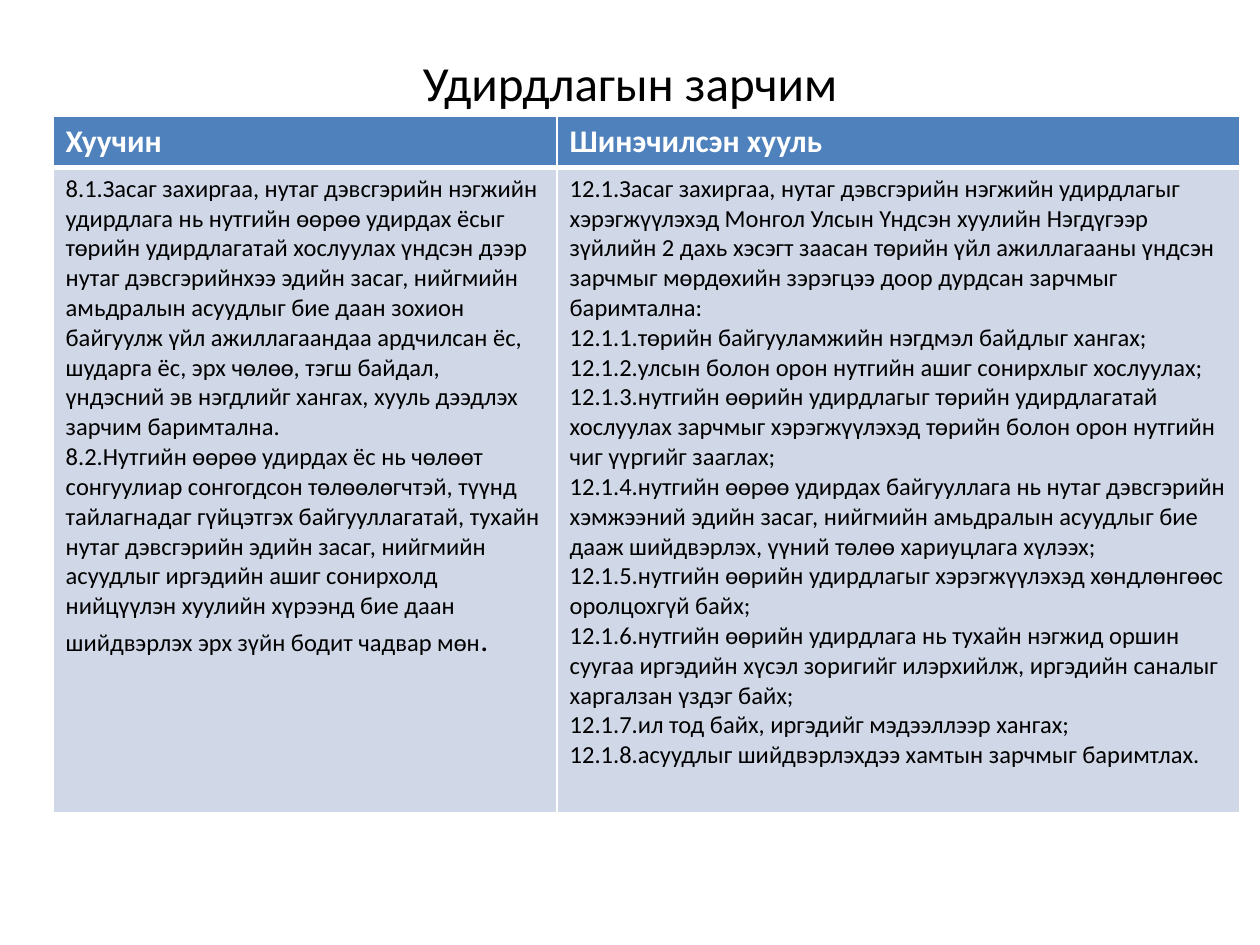
from lxml.etree import SubElement
from pptx import Presentation
from pptx.dml.color import RGBColor
from pptx.enum.text import MSO_ANCHOR, PP_ALIGN
from pptx.oxml.ns import qn
from pptx.util import Cm, Pt

FONT = "Calibri"
BLACK, WHITE = "000000", "FFFFFF"
HEADER_FILL, BODY_FILL = "4F81BD", "D0D8E8"

HEADINGS = ["Хуучин", "Шинэчилсэн хууль"]

OLD_LAW = [
    "8.1.Засаг захиргаа, нутаг дэвсгэрийн нэгжийн удирдлага нь нутгийн өөрөө удирдах ёсыг "
    "төрийн удирдлагатай хослуулах үндсэн дээр нутаг дэвсгэрийнхээ эдийн засаг, нийгмийн "
    "амьдралын асуудлыг бие даан зохион байгуулж үйл ажиллагаандаа ардчилсан ёс, шударга ёс, "
    "эрх чөлөө, тэгш байдал, үндэсний эв нэгдлийг хангах, хууль дээдлэх зарчим баримтална.",
    "8.2.Нутгийн өөрөө удирдах ёс нь чөлөөт сонгуулиар сонгогдсон төлөөлөгчтэй, түүнд "
    "тайлагнадаг гүйцэтгэх байгууллагатай, тухайн нутаг дэвсгэрийн эдийн засаг, нийгмийн "
    "асуудлыг иргэдийн ашиг сонирхолд нийцүүлэн хуулийн хүрээнд бие даан шийдвэрлэх эрх зүйн "
    "бодит чадвар мөн",
]

NEW_LAW = [
    "12.1.Засаг захиргаа, нутаг дэвсгэрийн нэгжийн удирдлагыг хэрэгжүүлэхэд Монгол Улсын "
    "Үндсэн хуулийн Нэгдүгээр зүйлийн 2 дахь хэсэгт заасан төрийн үйл ажиллагааны үндсэн "
    "зарчмыг мөрдөхийн зэрэгцээ доор дурдсан зарчмыг баримтална:",
    "12.1.1.төрийн байгууламжийн нэгдмэл байдлыг хангах;",
    "12.1.2.улсын болон орон нутгийн ашиг сонирхлыг хослуулах;",
    "12.1.3.нутгийн өөрийн удирдлагыг төрийн удирдлагатай хослуулах зарчмыг хэрэгжүүлэхэд "
    "төрийн болон орон нутгийн чиг үүргийг зааглах;",
    "12.1.4.нутгийн өөрөө удирдах байгууллага нь нутаг дэвсгэрийн хэмжээний эдийн засаг, "
    "нийгмийн амьдралын асуудлыг бие дааж шийдвэрлэх, үүний төлөө хариуцлага хүлээх;",
    "12.1.5.нутгийн өөрийн удирдлагыг хэрэгжүүлэхэд хөндлөнгөөс оролцохгүй байх;",
    "12.1.6.нутгийн өөрийн удирдлага нь тухайн нэгжид оршин суугаа иргэдийн хүсэл зоригийг "
    "илэрхийлж, иргэдийн саналыг харгалзан үздэг байх;",
    "12.1.7.ил тод байх, иргэдийг мэдээллээр хангах;",
    "12.1.8.асуудлыг шийдвэрлэхдээ хамтын зарчмыг баримтлах.",
]


def color(value):
    return RGBColor.from_string(value)


def add_span(para, text, size, ink=BLACK, bold=False):
    span = para.add_run()
    span.text = text
    span.font.name = FONT
    span.font.size = Pt(size)
    span.font.bold = bold
    span.font.color.rgb = color(ink)


def write_paragraphs(frame, texts, size, ink=BLACK, bold=False):
    for index, text in enumerate(texts):
        para = frame.add_paragraph() if index else frame.paragraphs[0]
        add_span(para, text, size, ink, bold)


def add_title(page, text):
    box = page.shapes.add_textbox(Cm(1.27), Cm(0.76), Cm(22.86), Cm(1.78))
    frame = box.text_frame
    frame.word_wrap = True
    frame.vertical_anchor = MSO_ANCHOR.MIDDLE
    frame.paragraphs[0].alignment = PP_ALIGN.CENTER
    add_span(frame.paragraphs[0], text, 28)


def style_cell(cell, fill, top, bottom):
    cell.fill.solid()
    cell.fill.fore_color.rgb = color(fill)
    properties = cell._tc.get_or_add_tcPr()
    # Borders come before the fill in the cell properties
    widths = {"a:lnL": 1, "a:lnR": 1, "a:lnT": top, "a:lnB": bottom}
    for index, (side, width) in enumerate(widths.items()):
        line = SubElement(properties, qn(side), w=str(Pt(width)))
        SubElement(SubElement(line, qn("a:solidFill")), qn("a:srgbClr"), val=WHITE)
        properties.insert(index, line)


def add_comparison(page):
    table = page.shapes.add_table(2, 2, Cm(1.07), Cm(2.34), Cm(23.93), Cm(14.04)).table
    for column, width in zip(table.columns, (10.16, 13.77)):
        column.width = Cm(width)
    for row, height in zip(table.rows, (1.04, 13)):
        row.height = Cm(height)

    for index, (heading, articles) in enumerate(zip(HEADINGS, (OLD_LAW, NEW_LAW))):
        header, body = table.cell(0, index), table.cell(1, index)
        style_cell(header, HEADER_FILL, top=1, bottom=3)
        style_cell(body, BODY_FILL, top=3, bottom=1)
        write_paragraphs(header.text_frame, [heading], 18, WHITE, bold=True)
        write_paragraphs(body.text_frame, articles, 14)

    # The old law closes with a larger full stop
    add_span(table.cell(1, 0).text_frame.paragraphs[-1], ".", 18)


def main():
    deck = Presentation()
    deck.slide_width, deck.slide_height = Cm(25.4), Cm(19.05)
    page = deck.slides.add_slide(deck.slide_layouts[6])
    add_title(page, "Удирдлагын зарчим")
    add_comparison(page)
    deck.save("out.pptx")


if __name__ == "__main__":
    main()
